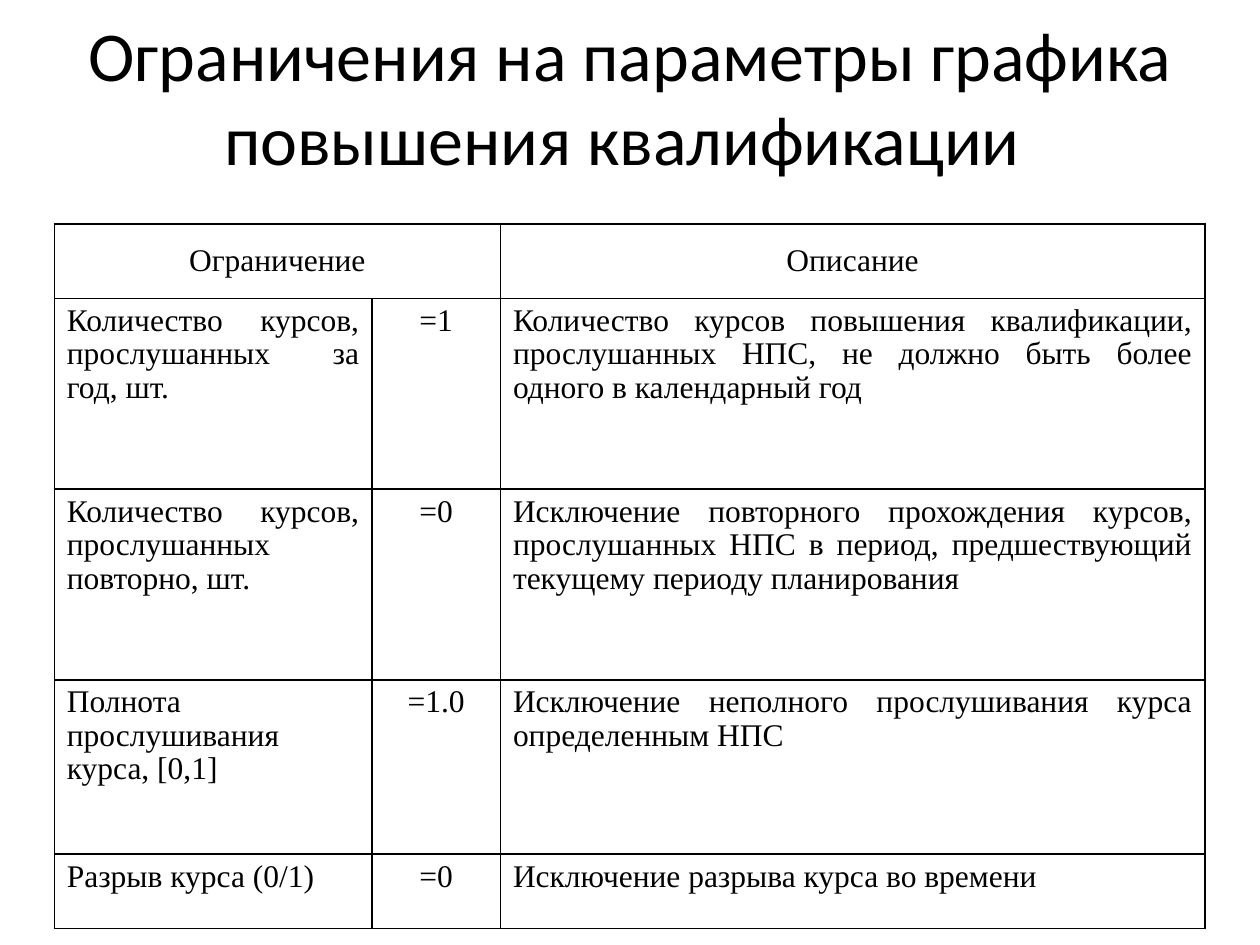
from lxml import etree
from pptx import Presentation
from pptx import util as u
from pptx.dml.color import RGBColor
from pptx.enum import text
from pptx.oxml.ns import qn

Pt = u.Pt
ALIGN, ANCHOR = text.PP_ALIGN, text.MSO_ANCHOR
COLORS = {"text": "000000", "border": "000000"}

# Content
TITLE = "Ограничения на параметры графика повышения квалификации "
ROWS = [
    ("Ограничение", "", "Описание"),
    ("Количество курсов, прослушанных за год, шт.", "=1",
     "Количество курсов повышения квалификации, прослушанных НПС, "
     "не должно быть более одного в календарный год"),
    ("Количество курсов, прослушанных повторно, шт.", "=0",
     "Исключение повторного прохождения курсов, прослушанных НПС в период, "
     "предшествующий текущему периоду планирования"),
    ("Полнота прослушивания курса, [0,1]", "=1.0",
     "Исключение неполного прослушивания курса определенным НПС"),
    ("Разрыв курса (0/1)", "=0", "Исключение разрыва курса во времени"),
]
COL_WIDTHS = (181.5, 73.5, 402.5)
ROW_HEIGHTS = (42.5, 109, 109, 99.5, 42.5)
COL_ALIGN = (ALIGN.JUSTIFY, ALIGN.CENTER, ALIGN.JUSTIFY)


def set_font(p, name, size):
    p.font.name, p.font.size = name, Pt(size)
    p.font.color.rgb = RGBColor.from_string(COLORS["text"])


def add_borders(cell):
    tc_pr = cell._tc.get_or_add_tcPr()
    for i, side in enumerate(("a:lnL", "a:lnR", "a:lnT", "a:lnB")):
        ln = etree.Element(qn(side), w=str(Pt(1)))
        fill = etree.SubElement(ln, qn("a:solidFill"))
        etree.SubElement(fill, qn("a:srgbClr"), val=COLORS["border"])
        tc_pr.insert(i, ln)


prs = Presentation()
prs.slide_width, prs.slide_height = Pt(720), Pt(540)
s = prs.slides.add_slide(prs.slide_layouts[5])

# Title
title = s.shapes.title
title.left, title.top, title.width, title.height = Pt(36), Pt(9.5), Pt(648), Pt(90)
tf = title.text_frame
tf.text = TITLE
tf.word_wrap = True
tf.vertical_anchor = ANCHOR.MIDDLE
tf.paragraphs[0].alignment = ALIGN.CENTER
set_font(tf.paragraphs[0], "Calibri", 40)

# Table of constraints
table = s.shapes.add_table(len(ROWS), len(COL_WIDTHS), Pt(31), Pt(128),
                           Pt(sum(COL_WIDTHS)), Pt(sum(ROW_HEIGHTS))).table
table.first_row = table.horz_banding = False
for col, width in zip(table.columns, COL_WIDTHS):
    col.width = Pt(width)
for row, height in zip(table.rows, ROW_HEIGHTS):
    row.height = Pt(height)
table.cell(0, 0).merge(table.cell(0, 1))

for r, row in enumerate(ROWS):
    for c, content in enumerate(row):
        cell = table.cell(r, c)
        cell.fill.background()
        add_borders(cell)
        cell.vertical_anchor = ANCHOR.TOP if r else ANCHOR.MIDDLE
        if cell.is_spanned:
            continue
        cell.text = content
        p = cell.text_frame.paragraphs[0]
        p.alignment = COL_ALIGN[c] if r else ALIGN.CENTER
        p.line_spacing = 0.96
        set_font(p, "Times New Roman", 18)

prs.save("out.pptx")
